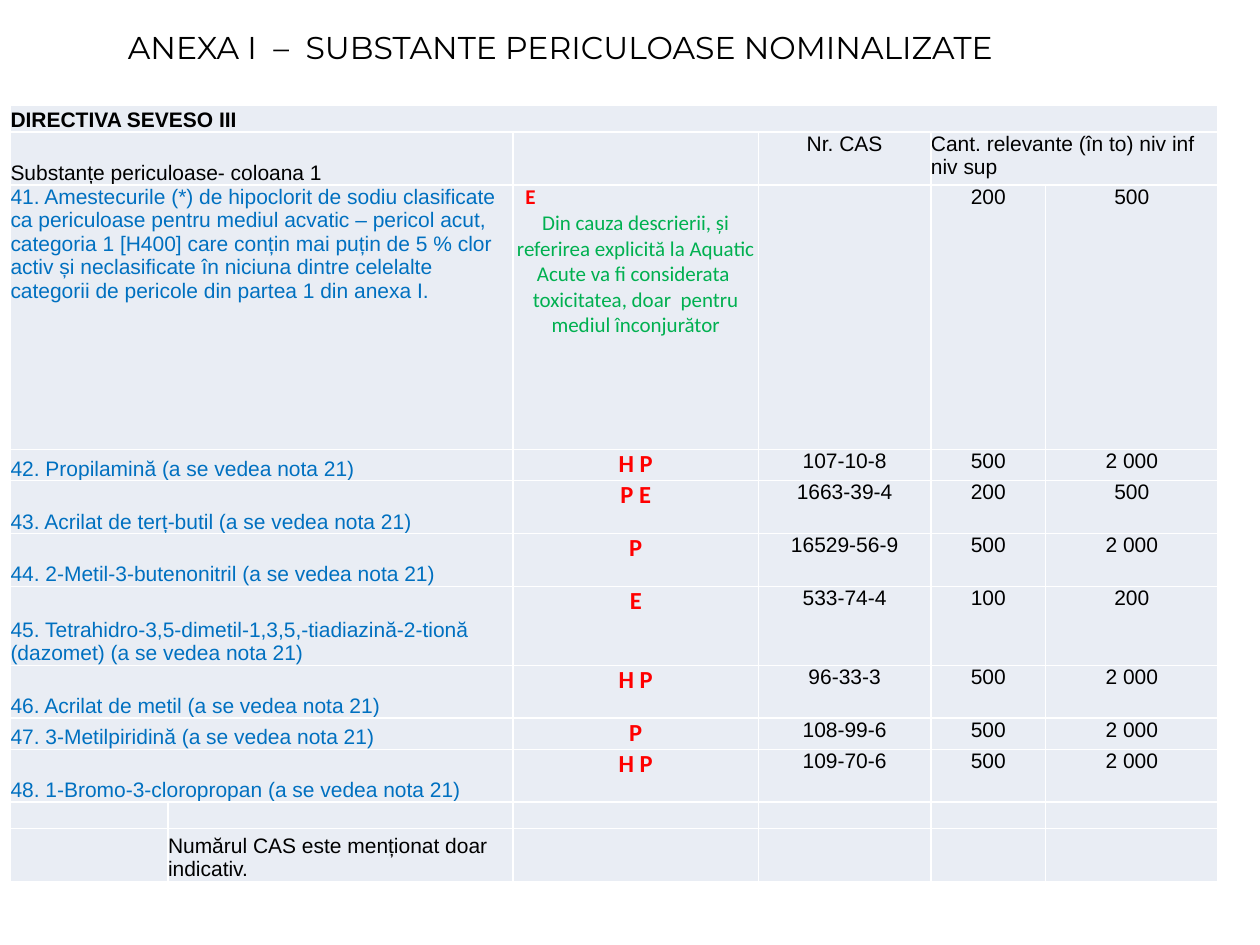
import pptx
import pptx.dml.color
import pptx.enum.text
import pptx.oxml
import pptx.oxml.ns
import pptx.util

Pt = pptx.util.Pt
RGBColor = pptx.dml.color.RGBColor
ALIGN = pptx.enum.text.PP_ALIGN
ANCHOR = pptx.enum.text.MSO_ANCHOR

BLACK = RGBColor(0x00, 0x00, 0x00)
WHITE = RGBColor(0xFF, 0xFF, 0xFF)
PALE = RGBColor(0xE9, 0xED, 0xF4)
BLUE = RGBColor(0x00, 0x70, 0xC0)
RED = RGBColor(0xFF, 0x00, 0x00)
GREEN = RGBColor(0x00, 0xB0, 0x50)

COLUMNS = [90, 197.2, 140.2, 98.6, 65.6, 98.4]
ROWS = [15.1, 30.2, 151.2, 17.8, 30.2, 30.2, 45.2, 30.2, 17.8, 30.2, 15.1, 30.2]

MIXTURE = (
    "41. Amestecurile (*) de hipoclorit de sodiu clasificate ca periculoase "
    "pentru mediul acvatic – pericol acut, categoria 1 [H400] care conțin mai "
    "puțin de 5 % clor activ și neclasificate în niciuna dintre celelalte "
    "categorii de pericole din partea 1 din anexa I."
)
REASON = (
    "Din cauza descrierii, și referirea explicită la Aquatic Acute va fi "
    "considerata  toxicitatea, doar  pentru mediul înconjurător"
)
SUBSTANCES = [
    ("42. Propilamină", "H P", "107-10-8", "500", "2 000"),
    ("43. Acrilat de terț-butil", "P E", "1663-39-4", "200", "500"),
    ("44. 2-Metil-3-butenonitril", "P", "16529-56-9", "500", "2 000"),
    ("45. Tetrahidro-3,5-dimetil-1,3,5,-tiadiazină-2-tionă (dazomet)", "E", "533-74-4", "100", "200"),
    ("46. Acrilat de metil", "H P", "96-33-3", "500", "2 000"),
    ("47. 3-Metilpiridină", "P", "108-99-6", "500", "2 000"),
    ("48. 1-Bromo-3-cloropropan", "H P", "109-70-6", "500", "2 000"),
]


class SlideBuilder:
    font, size, color = "Arial", 12, BLACK

    def __init__(self, prs):
        self.s = prs.slides.add_slide(prs.slide_layouts[6])

    def paragraph(self, p, text, font=None, size=None, color=None, bold=False,
                  align=ALIGN.LEFT, indent=0):
        p.text = text
        p.alignment = align
        p.font.name = font or self.font
        p.font.size = Pt(size or self.size)
        p.font.color.rgb = color or self.color
        p.font.bold = bold
        if indent:
            p._p.get_or_add_pPr().set("marL", str(Pt(indent)))

    def text(self, x, y, w, h, text, **style):
        tf = self.s.shapes.add_textbox(Pt(x), Pt(y), Pt(w), Pt(h)).text_frame
        tf.word_wrap = True
        tf.auto_size = pptx.enum.text.MSO_AUTO_SIZE.SHAPE_TO_FIT_TEXT
        self.paragraph(tf.paragraphs[0], text, **style)

    def table(self, x, y, columns, rows):
        frame = self.s.shapes.add_table(
            len(rows), len(columns), Pt(x), Pt(y), Pt(sum(columns)), Pt(sum(rows)))
        table = frame.table
        table.first_row = table.horz_banding = False
        for column, width in zip(table.columns, columns):
            column.width = Pt(width)
        for row, height in zip(table.rows, rows):
            row.height = Pt(height)
        for cell in table.iter_cells():
            cell.margin_left = cell.margin_right = 0
            cell.margin_top = cell.margin_bottom = 0
            self.borders(cell)
            cell.fill.solid()
            cell.fill.fore_color.rgb = PALE
            self.paragraph(cell.text_frame.paragraphs[0], "")
        return table

    def borders(self, cell):
        for side in ("lnL", "lnR", "lnT", "lnB"):
            cell._tc.get_or_add_tcPr().append(pptx.oxml.parse_xml(
                f'<a:{side} {pptx.oxml.ns.nsdecls("a")} w="{Pt(1)}"><a:solidFill>'
                f'<a:srgbClr val="{WHITE}"/></a:solidFill></a:{side}>'))

    def cell(self, table, row, col, text, span=1, anchor=ANCHOR.TOP, **style):
        cell = table.cell(row, col)
        if span > 1:
            cell.merge(table.cell(row, col + span - 1))
        cell.vertical_anchor = anchor
        self.paragraph(cell.text_frame.paragraphs[0], text, **style)
        return cell


def main():
    prs = pptx.Presentation()
    prs.slide_width, prs.slide_height = Pt(720), Pt(540)
    b = SlideBuilder(prs)
    table = b.table(6, 60.4, COLUMNS, ROWS)

    b.cell(table, 0, 0, "DIRECTIVA SEVESO III", span=6, anchor=ANCHOR.BOTTOM, bold=True)
    b.cell(table, 1, 0, "Substanțe periculoase- coloana 1", span=2, anchor=ANCHOR.BOTTOM)
    b.cell(table, 1, 3, "Nr. CAS", align=ALIGN.CENTER)
    b.cell(table, 1, 4, "Cant. relevante (în to) niv inf niv sup", span=2)

    b.cell(table, 2, 0, MIXTURE, span=2, color=BLUE)
    hazard = b.cell(table, 2, 2, "E", font="Calibri", color=RED, bold=True, indent=7)
    b.paragraph(hazard.text_frame.add_paragraph(), REASON, font="Calibri",
                color=GREEN, align=ALIGN.CENTER)
    for col, amount in enumerate(("200", "500"), 4):
        b.cell(table, 2, col, amount, align=ALIGN.CENTER)

    for row, (name, code, *values) in enumerate(SUBSTANCES, 3):
        b.cell(table, row, 0, f"{name} (a se vedea nota 21)", span=2,
               anchor=ANCHOR.BOTTOM, color=BLUE)
        b.cell(table, row, 2, code, font="Calibri", size=14, color=RED, bold=True,
               align=ALIGN.CENTER)
        for col, value in enumerate(values, 3):
            b.cell(table, row, col, value, align=ALIGN.CENTER)

    b.cell(table, 11, 1, "Numărul CAS este menționat doar indicativ.", anchor=ANCHOR.BOTTOM)
    b.text(66, 12.4, 624, 29, "ANEXA I  –  SUBSTANTE PERICULOASE NOMINALIZATE",
           font="Montserrat", size=18)
    prs.save("out.pptx")


if __name__ == "__main__":
    main()
